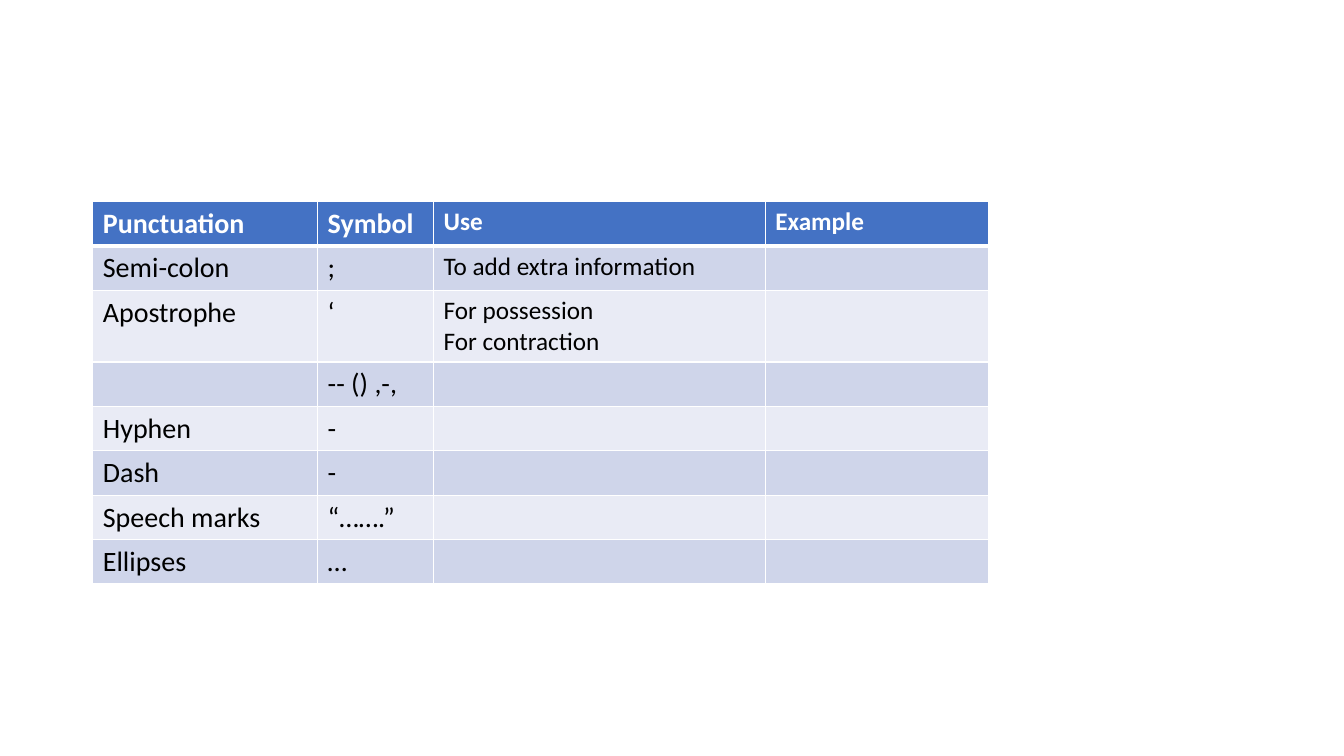
from lxml.etree import SubElement
from pptx import Presentation
from pptx.dml.color import RGBColor as Color
from pptx.oxml.ns import qn
from pptx.util import Inches, Pt

COLORS = {
    "header": "4472C4",
    "odd_row": "CFD5EA",
    "even_row": "E9EBF5",
    "border": "FFFFFF",
    "header_text": "FFFFFF",
    "body_text": "000000",
}
COLUMN_WIDTHS = [2.23, 1.15, 3.29, 2.22]
COLUMN_FONT_SIZES = [20, 20, 18, 18]
ROW_HEIGHT, TWO_LINE_HEIGHT = 0.44, 0.71
ROWS = [
    ["Punctuation", "Symbol", "Use", "Example"],
    ["Semi-colon", ";", "To add extra information", ""],
    ["Apostrophe", "‘", "For possession\nFor contraction", ""],
    ["", "-- () ,-,", "", ""],
    ["Hyphen", "-", "", ""],
    ["Dash", "-", "", ""],
    ["Speech marks", "“…….”", "", ""],
    ["Ellipses", "…", "", ""],
]


def add_borders(cell, widths):
    """Draw the cell's borders; widths maps a side (L, R, T, B) to points."""
    properties = cell._tc.get_or_add_tcPr()
    for side, width in widths.items():
        line = SubElement(properties, qn(f"a:ln{side}"), w=str(Pt(width)))
        fill = SubElement(line, qn("a:solidFill"))
        SubElement(fill, qn("a:srgbClr"), val=COLORS["border"])


presentation = Presentation()
presentation.slide_width = Inches(13.33)
presentation.slide_height = Inches(7.5)
slide = presentation.slides.add_slide(presentation.slide_layouts[6])

heights = [TWO_LINE_HEIGHT if any("\n" in text for text in row) else ROW_HEIGHT
           for row in ROWS]
table = slide.shapes.add_table(
    len(ROWS), len(COLUMN_WIDTHS), Inches(0.92), Inches(2),
    Inches(sum(COLUMN_WIDTHS)), Inches(sum(heights))).table
for column, width in zip(table.columns, COLUMN_WIDTHS):
    column.width = Inches(width)

for row_index, (texts, height) in enumerate(zip(ROWS, heights)):
    table.rows[row_index].height = Inches(height)
    is_header = row_index == 0
    row_fill = "header" if is_header else "odd_row" if row_index % 2 else "even_row"
    text_color = "header_text" if is_header else "body_text"
    borders = {"L": 1, "R": 1, "T": 3 if row_index == 1 else 1, "B": 3 if is_header else 1}

    for column_index, text in enumerate(texts):
        cell = table.cell(row_index, column_index)
        add_borders(cell, borders)
        cell.fill.solid()
        cell.fill.fore_color.rgb = Color.from_string(COLORS[row_fill])
        if not text:
            continue
        for line_index, line_text in enumerate(text.split("\n")):
            frame = cell.text_frame
            paragraph = frame.add_paragraph() if line_index else frame.paragraphs[0]
            run = paragraph.add_run()
            run.text = line_text
            run.font.name = "Calibri"
            run.font.size = Pt(COLUMN_FONT_SIZES[column_index])
            run.font.bold = is_header
            run.font.color.rgb = Color.from_string(COLORS[text_color])

presentation.save("out.pptx")
